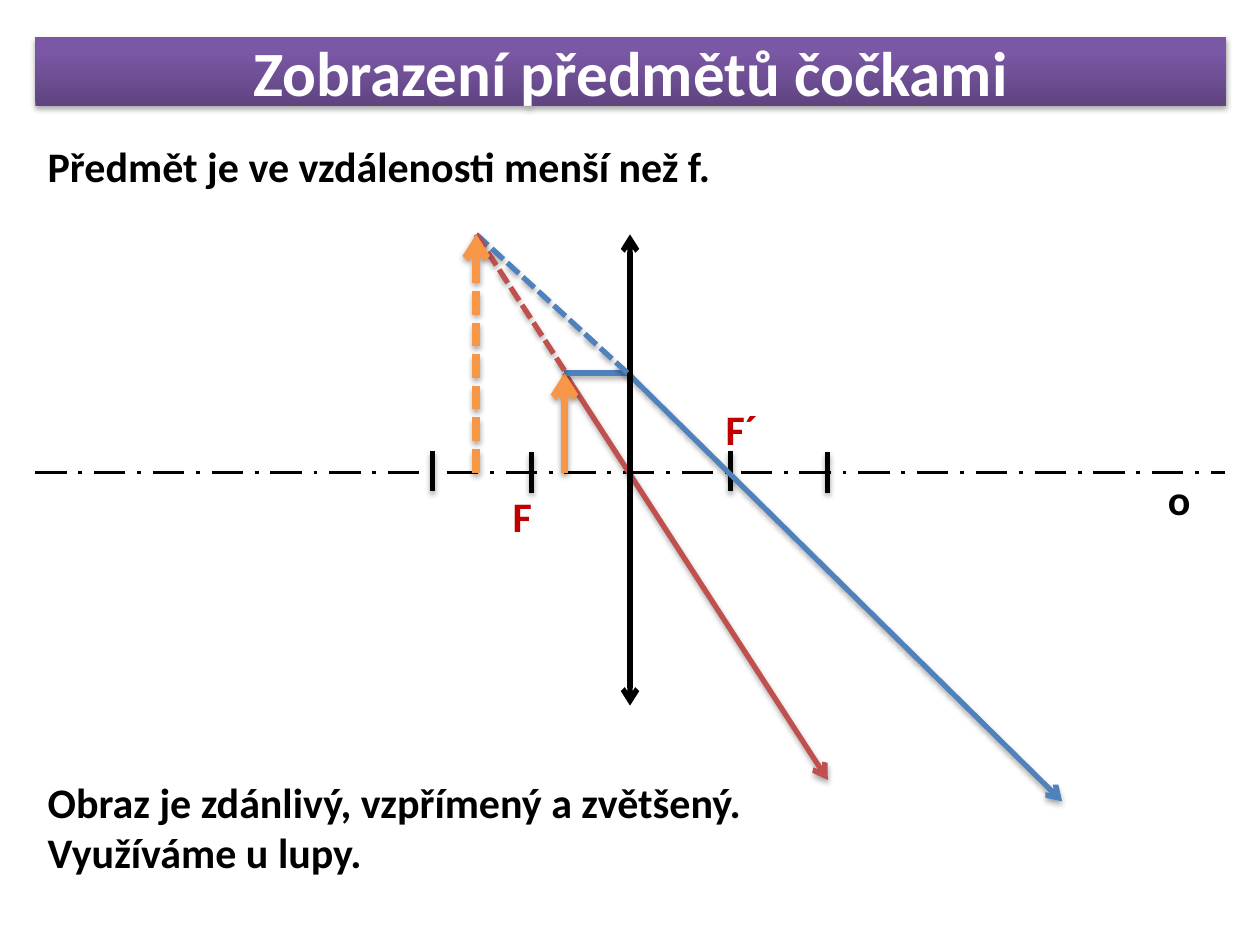
from dataclasses import dataclass

from lxml import etree
from pptx import Presentation
from pptx import util as u
from pptx.dml.color import RGBColor
from pptx.enum import dml, shapes, text
from pptx.oxml import ns


@dataclass(frozen=True)
class Theme:
    font: str = "Calibri"
    head: int = 36
    body: int = 24
    thin: float = 2.25
    ray: float = 3
    bold: float = 4.5
    black: str = "000000"
    white: str = "FFFFFF"
    red: str = "C00000"
    blue: str = "4F81BD"
    rust: str = "C0504D"
    gold: str = "F79646"
    dark: str = "5F4480"
    light: str = "7B58A6"


T = Theme()
DASH = dml.MSO_LINE.SQUARE_DOT
LEFT, WIDE, AXIS, LENS = 0.28, 9.45, 3.75, 5
TIP = (4.48, 2.96)
IMAGE = (3.78, 1.86)
BEND = (4.98, 2.96)


def color(code):
    return RGBColor.from_string(code)


def node(parent, tag, **attrs):
    return etree.SubElement(parent, ns.qn(tag), attrs)


def shade(props, on=True):
    group = node(props, "a:effectLst")
    if on:
        drop = node(group, "a:outerShdw", blurRad="40000", dist="23000",
                    dir="5400000", rotWithShape="0")
        tint = node(drop, "a:srgbClr", val=T.black)
        node(tint, "a:alpha", val="35000")


def write(frame, lines, size, ink, align=None):
    frame.word_wrap = True
    for i, line in enumerate(lines):
        para = frame.paragraphs[0] if i == 0 else frame.add_paragraph()
        para.text = line
        para.alignment = align
        font = para.font
        font.name, font.size, font.bold = T.font, u.Pt(size), True
        font.color.rgb = color(ink)


def title(slide, words):
    bar = slide.shapes.add_shape(
        shapes.MSO_SHAPE.RECTANGLE, u.Inches(LEFT), u.Inches(0.29),
        u.Inches(WIDE), u.Inches(0.55))
    bar.fill.gradient()
    bar.fill.gradient_angle = 90
    for stop, place, tone in zip(bar.fill.gradient_stops, (0, 0.8),
                                 (T.dark, T.light)):
        stop.position = place
        stop.color.rgb = color(tone)
    bar.line.fill.background()
    shade(bar._element.spPr)
    bar.text_frame.vertical_anchor = text.MSO_ANCHOR.MIDDLE
    write(bar.text_frame, [words], T.head, T.white, text.PP_ALIGN.CENTER)


def label(slide, lines, left, top, wide=0.51, high=0.5, ink=T.black):
    box = slide.shapes.add_textbox(u.Inches(left), u.Inches(top),
                                   u.Inches(wide), u.Inches(high))
    write(box.text_frame, lines, T.body, ink)


def line(slide, start, end, ink=T.black, width=T.ray, dash=None,
         ends=(), shadow=True):
    ray = slide.shapes.add_connector(
        shapes.MSO_CONNECTOR.STRAIGHT,
        *(u.Inches(v) for v in (*start, *end)))
    ray.line.color.rgb = color(ink)
    ray.line.width = u.Pt(width)
    if dash:
        ray.line.dash_style = dash
    for side in ends:
        node(ray.line._get_or_add_ln(), f"a:{side}End", type="arrow")
    shade(ray._element.spPr, shadow)


def main():
    deck = Presentation()
    deck.slide_width, deck.slide_height = u.Inches(10), u.Inches(7.5)
    slide = deck.slides.add_slide(deck.slide_layouts[6])
    tail = ("tail",)

    title(slide, "Zobrazení předmětů čočkami")
    label(slide, ["Předmět je ve vzdálenosti menší než f."],
          LEFT, 1.07, WIDE)
    line(slide, (LEFT, AXIS), (10 - LEFT, AXIS), width=T.thin,
         dash=dml.MSO_LINE.LONG_DASH_DOT, shadow=False)
    for x, top in ((3.43, 3.58), (4.22, 3.59), (5.8, 3.58), (6.57, 3.59)):
        line(slide, (x, top), (x, top + 0.32))
    label(slide, ["F"], 3.97, 3.84, ink=T.red)

    line(slide, BEND, (8.43, 6.36), T.blue, ends=tail)
    line(slide, TIP, (6.57, 6.19), T.rust, ends=tail)
    label(slide, ["o"], 9.17, 3.71)
    line(slide, TIP, (LENS, TIP[1]), T.blue)
    line(slide, (LENS, 5.6), (LENS, 1.86), ends=("head", "tail"),
         shadow=False)
    label(slide, ["F´"], 5.66, 3.15, ink=T.red)
    label(slide, ["Obraz je zdánlivý, vzpřímený a zvětšený.",
                  "Využíváme u lupy."], LEFT, 6.11, WIDE, 0.91)

    line(slide, (TIP[0], AXIS), TIP, T.gold, T.bold, ends=tail)
    line(slide, IMAGE, BEND, T.blue, dash=DASH)
    line(slide, IMAGE, (4.48, 2.94), T.rust, dash=DASH)
    line(slide, (IMAGE[0], AXIS), IMAGE, T.gold, T.bold, DASH, tail)
    deck.save("out.pptx")


if __name__ == "__main__":
    main()
